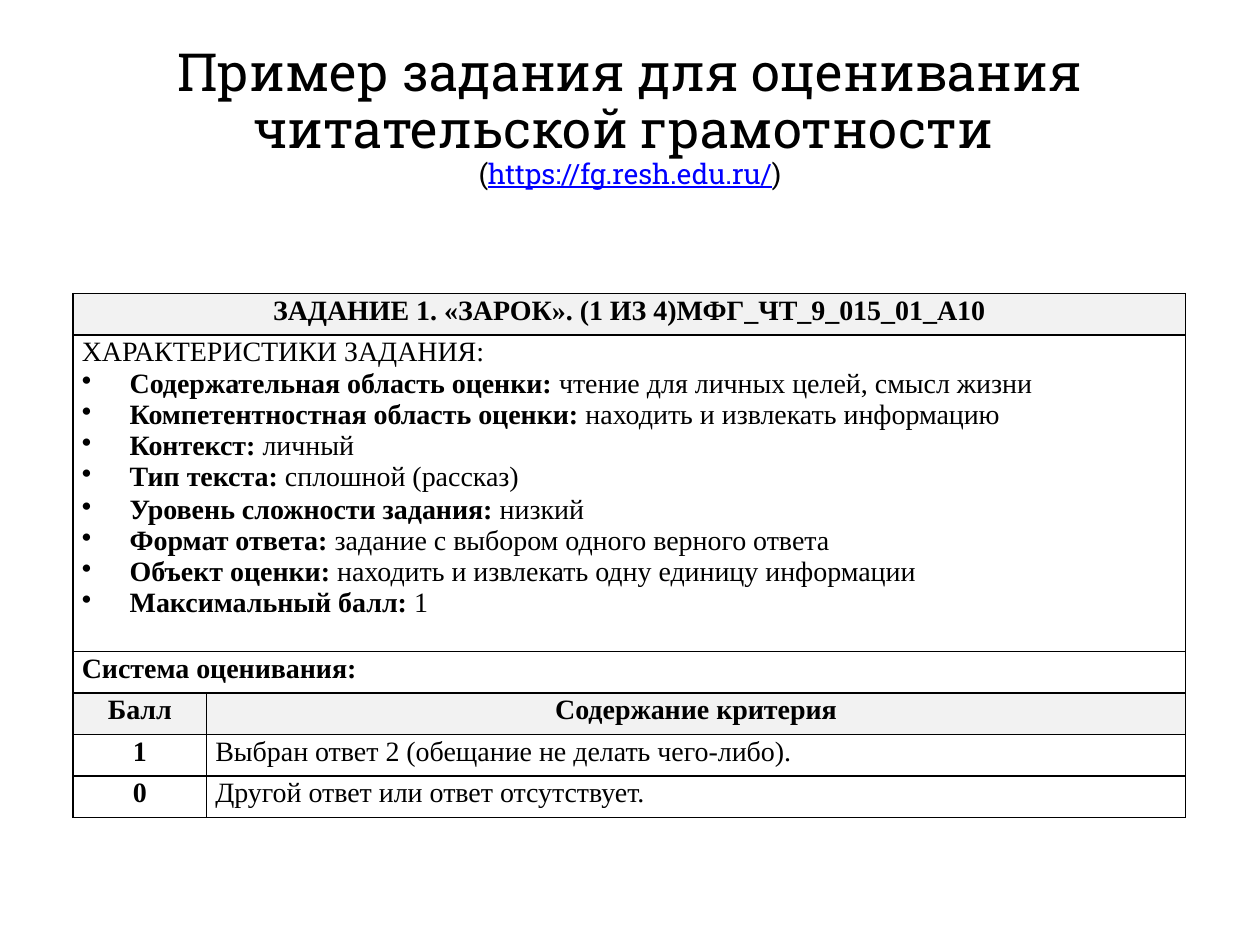
from dataclasses import dataclass
from lxml import etree
from pptx import Presentation
from pptx.dml.color import RGBColor
from pptx.enum.text import MSO_ANCHOR, MSO_AUTO_SIZE, PP_ALIGN
from pptx.oxml.ns import qn
from pptx.util import Inches, Pt

CENTER, LEFT = PP_ALIGN.CENTER, PP_ALIGN.LEFT
TITLE_FONT, TABLE_FONT = "Roboto Slab", "Times New Roman"
COLORS = {"text": "000000", "link": "0000FF", "header": "F2F2F2", "cell": "FFFFFF"}


@dataclass
class Run:
    text: str
    size: int = 16
    font: str = TABLE_FONT
    bold: bool = False
    color: str = "text"
    underline: bool = False


@dataclass
class Para:
    runs: list[Run]
    align: PP_ALIGN = LEFT
    spacing: float = 1.06
    bullet: bool = False


@dataclass
class Cell:
    paras: list[Para]
    fill: str = "cell"


def rgb(name: str) -> RGBColor:
    return RGBColor.from_string(COLORS[name])


def add_bullet(p) -> None:
    pPr = p._p.get_or_add_pPr()
    pPr.set("marL", str(Inches(0.38)))
    pPr.set("indent", str(-Inches(0.38)))
    etree.SubElement(pPr, qn("a:buChar")).set("char", "•")


def write_text(tf, paras: list[Para]) -> None:
    for i, para in enumerate(paras):
        p = tf.add_paragraph() if i else tf.paragraphs[0]
        if para.bullet:
            add_bullet(p)
        p.alignment = para.align
        p.line_spacing = para.spacing
        p.space_before = p.space_after = Pt(0)
        for run in para.runs:
            r = p.add_run()
            r.text = run.text
            r.font.name = run.font
            r.font.size = Pt(run.size)
            r.font.bold = run.bold
            r.font.underline = run.underline
            r.font.color.rgb = rgb(run.color)


def add_borders(cell) -> None:
    tcPr = cell._tc.get_or_add_tcPr()
    for side in ("lnL", "lnR", "lnT", "lnB"):
        ln = etree.SubElement(tcPr, qn(f"a:{side}"), w=str(Pt(1)))
        fill = etree.SubElement(ln, qn("a:solidFill"))
        etree.SubElement(fill, qn("a:srgbClr"), val=COLORS["text"])


def add_title(s, paras: list[Para]) -> None:
    sp = s.shapes.title
    sp.left, sp.top, sp.width, sp.height = map(Inches, (0, 0.25, 10, 1.38))
    tf = sp.text_frame
    tf.word_wrap = True
    tf.auto_size = MSO_AUTO_SIZE.SHAPE_TO_FIT_TEXT
    tf.vertical_anchor = MSO_ANCHOR.MIDDLE
    write_text(tf, paras)


def add_task_table(s, rows: list[list[Cell]], widths: list[float], heights: list[float]) -> None:
    table = s.shapes.add_table(
        len(rows), len(widths), Inches(0.58), Inches(2.33),
        Inches(sum(widths)), Inches(sum(heights))).table
    table.first_row = table.horz_banding = False
    for column, width in zip(table.columns, widths):
        column.width = Inches(width)
    for row, height in zip(table.rows, heights):
        row.height = Inches(height)
    for i, row in enumerate(rows):
        for j in range(len(widths)):
            cell = table.cell(i, j)
            add_borders(cell)
            cell.fill.solid()
            cell.fill.fore_color.rgb = rgb(row[min(j, len(row) - 1)].fill)
        if len(row) == 1:
            table.cell(i, 0).merge(table.cell(i, len(widths) - 1))
        for j, content in enumerate(row):
            cell = table.cell(i, j)
            cell.margin_left = cell.margin_right = Inches(0.07)
            cell.margin_top = cell.margin_bottom = 0
            cell.vertical_anchor = MSO_ANCHOR.TOP
            write_text(cell.text_frame, content.paras)


def line(text: str, bold: bool = False, align: PP_ALIGN = LEFT, fill: str = "cell") -> Cell:
    return Cell([Para([Run(text, bold=bold)], align)], fill)


def header(text: str) -> Cell:
    return line(text, True, CENTER, "header")


def feature(label: str, value: str, spacing: float = 1.0) -> Para:
    return Para([Run(f"{label}:", bold=True), Run(f" {value}")], spacing=spacing, bullet=True)


def title_line(*runs: Run) -> Para:
    return Para(list(runs), CENTER, 0.9)


TITLE = [
    title_line(Run("Пример задания для оценивания", 30, TITLE_FONT)),
    title_line(Run("читательской грамотности ", 30, TITLE_FONT)),
    title_line(
        Run("(", font=TITLE_FONT),
        Run("https://fg.resh.edu.ru/", font=TITLE_FONT, color="link", underline=True),
        Run(")", font=TITLE_FONT)),
]
FEATURES = [
    Para([Run("ХАРАКТЕРИСТИКИ ЗАДАНИЯ:")]),
    feature("Содержательная область оценки", "чтение для личных целей, смысл жизни"),
    feature("Компетентностная область оценки", "находить и извлекать информацию"),
    feature("Контекст", "личный"),
    feature("Тип текста", "сплошной (рассказ)"),
    feature("Уровень сложности задания", "низкий", 1.06),
    feature("Формат ответа", "задание с выбором одного верного ответа"),
    feature("Объект оценки", "находить и извлекать одну единицу информации"),
    feature("Максимальный балл", "1"),
]
ROWS = [
    [header("ЗАДАНИЕ 1. «ЗАРОК». (1 ИЗ 4)МФГ_ЧТ_9_015_01_А10")],
    [Cell(FEATURES)],
    [line("Система оценивания:", True)],
    [header("Балл"), header("Содержание критерия")],
    [line("1", True, CENTER), line("Выбран ответ 2 (обещание не делать чего-либо).")],
    [line("0", True, CENTER), line("Другой ответ или ответ отсутствует.")],
]


def main() -> None:
    prs = Presentation()
    prs.slide_width, prs.slide_height = Inches(10), Inches(7.5)
    s = prs.slides.add_slide(prs.slide_layouts[5])
    add_title(s, TITLE)
    add_task_table(s, ROWS, [1.06, 7.77], [0.33, 2.51] + [0.33] * 4)
    prs.save("out.pptx")


if __name__ == "__main__":
    main()
